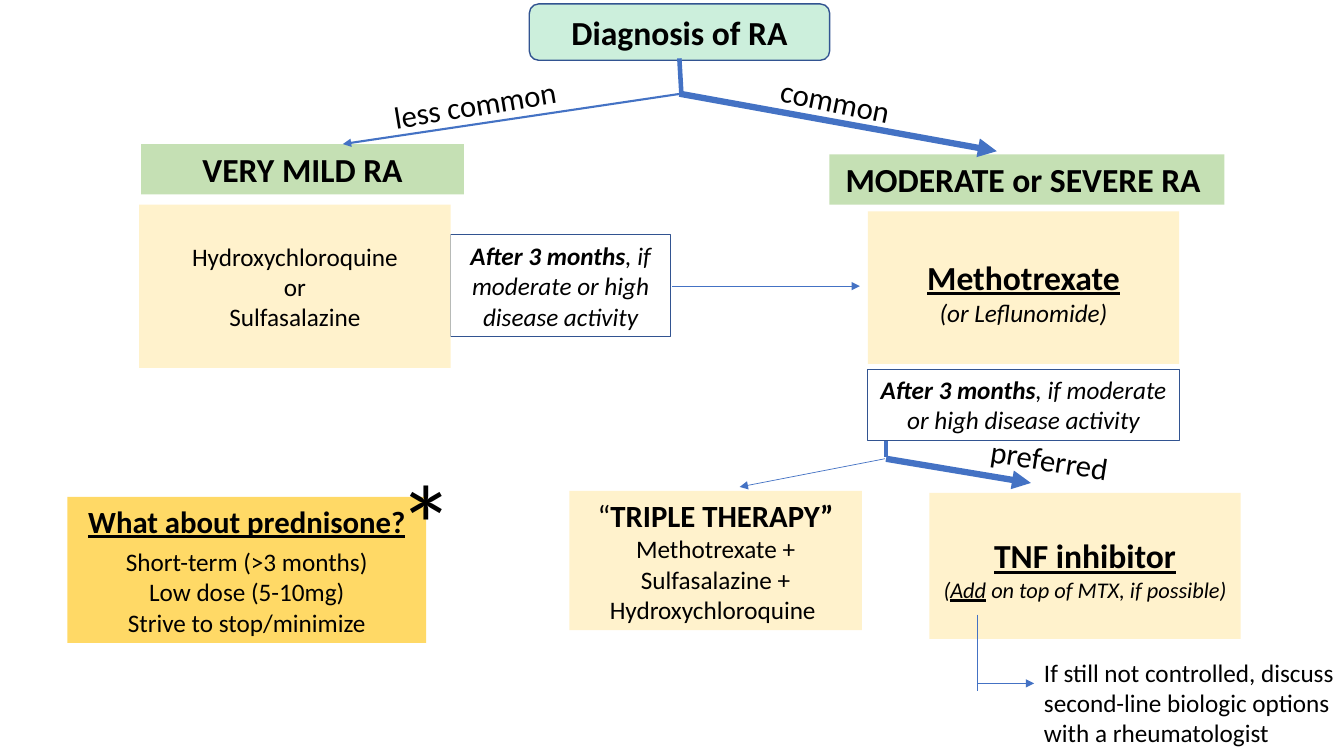
import dataclasses
import typing

import pptx
import pptx.dml.color
import pptx.enum.shapes
import pptx.enum.text
import pptx.oxml
import pptx.oxml.ns
import pptx.slide
import pptx.text.text
import pptx.util

Cm = pptx.util.Cm
Pt = pptx.util.Pt
Rgb = pptx.dml.color.RGBColor.from_string
Align = pptx.enum.text.PP_ALIGN
Anchor = pptx.enum.text.MSO_ANCHOR
Preset = pptx.enum.shapes.MSO_SHAPE


@dataclasses.dataclass(frozen=True)
class Theme:
    font: str = "Calibri"
    ink: str = "000000"
    start: str = "CCEFDC"
    severity: str = "C5E0B4"
    treatment: str = "FFF2CC"
    steroid: str = "FFD966"
    border: str = "325491"
    arrow: str = "4472C4"
    heading: float = 24
    label: float = 22
    body: float = 18
    remark: float = 16
    asterisk: float = 80
    thin: float = 0.5
    medium: float = 1.5
    stem: float = 3.25
    thick: float = 4.5


THEME = Theme()


class Run(typing.NamedTuple):
    text: str
    size: float = THEME.body
    style: dict[str, bool] = {}


class Line(typing.NamedTuple):
    runs: list[Run]
    space_before: float = 0


class Box(typing.NamedTuple):
    """A filled or outlined box; top_inset anchors its text to the top edge."""
    at: tuple[float, float, float, float]
    lines: list[Line]
    fill: str | None = None
    border: float = 0
    preset: Preset = Preset.RECTANGLE
    top_inset: float | None = None


class Label(typing.NamedTuple):
    at: tuple[float, float, float, float]
    run: Run
    rotation: float = 0
    wrap: bool = True


class Link(typing.NamedTuple):
    start: tuple[float, float]
    end: tuple[float, float]
    width: float
    arrow: bool = True


BOLD = {"bold": True}
ITALIC = {"italic": True}
BOLD_ITALIC = BOLD | ITALIC
TITLE = {"bold": True, "underline": True}

ESCALATION = [Line([Run("After 3 months", style=BOLD_ITALIC),
                    Run(", if moderate or high disease activity", style=ITALIC)])]

BOXES = [
    Box((13.34, 0.1, 7.57, 1.42), [Line([Run("Diagnosis of RA", THEME.heading, BOLD)])],
        THEME.start, 1, Preset.ROUNDED_RECTANGLE),
    Box((1.7, 12.52, 9.04, 3.68), [
        Line([Run("What about prednisone?", THEME.label, TITLE)]),
        Line([Run("Short-term (>3 months)")], space_before=5),
        Line([Run("Low dose (5-10mg)")]),
        Line([Run("Strive to stop/minimize")]),
    ], THEME.steroid),
    Box((20.9, 3.89, 9.96, 1.27),
        [Line([Run("MODERATE or SEVERE RA ", THEME.heading, BOLD)])], THEME.severity),
    Box((3.56, 3.63, 8.13, 1.27),
        [Line([Run("VERY MILD RA", THEME.heading, BOLD)])], THEME.severity),
    Box((11.35, 5.92, 5.56, 2.57), ESCALATION, border=0.75),
    Box((3.51, 5.16, 7.85, 4.11),
        [Line([Run(name)]) for name in ("Hydroxychloroquine", "or", "Sulfasalazine")],
        THEME.treatment),
    Box((21.87, 5.33, 7.85, 3.84), [
        Line([Run("Methotrexate", THEME.heading, TITLE)]),
        Line([Run("(or Leflunomide)", style=ITALIC)]),
    ], THEME.treatment, top_inset=1.14),
    Box((21.87, 9.3, 7.85, 1.8), ESCALATION, border=0.75),
    Box((23.42, 12.42, 7.85, 3.68), [
        Line([Run("TNF inhibitor", THEME.heading, TITLE)]),
        Line([Run("(", THEME.remark, ITALIC),
              Run("Add", THEME.remark, ITALIC | {"underline": True}),
              Run(" on top of MTX, if possible)", THEME.remark, ITALIC)]),
    ], THEME.treatment, top_inset=1.07),
    Box((14.35, 12.37, 7.37, 3.51), [
        Line([Run("“", THEME.label), Run("TRIPLE THERAPY”", THEME.label, BOLD)]),
        Line([Run("Methotrexate + Sulfasalazine + Hydroxychloroquine ")]),
    ], THEME.treatment),
]

LABELS = [
    Label((19.38, 2.26, 6.38, 1.19), Run("common", THEME.label), 11.7),
    Label((9.65, 1.96, 5.51, 1.19), Run("less common", THEME.label), -9.3),
    Label((24.71, 11.02, 3.89, 1.19), Run("preferred", THEME.label), 9),
    Label((26.06, 16.43, 7.75, 2.57), Run(
        "If still not controlled, discuss second-line biologic options with a rheumatologist")),
    Label((9.8, 11.3, 1.93, 3.68), Run("*", THEME.asterisk), wrap=False),
]

LINKS = [
    Link((17.17, 2.36), (8.64, 3.63), THEME.medium),
    Link((17.12, 2.36), (25.12, 3.81), THEME.thick),
    Link((17.17, 2.34), (17.12, 1.47), THEME.stem, arrow=False),
    Link((16.94, 7.21), (21.67, 7.21), THEME.thin),
    Link((22.33, 11.56), (25.98, 12.17), THEME.thick),
    Link((22.3, 11.56), (18.64, 12.27), THEME.thin),
    Link((22.33, 11.51), (22.33, 11.1), THEME.stem, arrow=False),
    Link((24.64, 15.49), (24.64, 17.42), THEME.thin, arrow=False),
    Link((24.64, 17.22), (26.06, 17.22), THEME.thin),
]


def write_lines(frame: pptx.text.text.TextFrame, lines: list[Line], align: Align) -> None:
    for index, line in enumerate(lines):
        paragraph = frame.add_paragraph() if index else frame.paragraphs[0]
        paragraph.alignment = align
        if line.space_before:
            paragraph.space_before = Pt(line.space_before)
        for run in line.runs:
            piece = paragraph.add_run()
            piece.text = run.text
            piece.font.color.rgb = Rgb(THEME.ink)
            formats = {"name": THEME.font, "size": Pt(run.size)} | run.style
            for attribute, value in formats.items():
                setattr(piece.font, attribute, value)


def draw_box(slide: pptx.slide.Slide, box: Box) -> None:
    panel = slide.shapes.add_shape(box.preset, *map(Cm, box.at))
    panel.shadow.inherit = False
    if box.fill:
        panel.fill.solid()
        panel.fill.fore_color.rgb = Rgb(box.fill)
    else:
        panel.fill.background()
    if box.border:
        panel.line.color.rgb = Rgb(THEME.border)
        panel.line.width = Pt(box.border)
    else:
        panel.line.fill.background()
    frame = panel.text_frame
    frame.word_wrap = True
    frame.vertical_anchor = Anchor.MIDDLE
    if box.top_inset is not None:
        frame.vertical_anchor = Anchor.TOP
        frame.margin_top = Cm(box.top_inset)
    write_lines(frame, box.lines, Align.CENTER)


def draw_label(slide: pptx.slide.Slide, label: Label) -> None:
    caption = slide.shapes.add_textbox(*map(Cm, label.at))
    caption.rotation = label.rotation
    caption.text_frame.word_wrap = label.wrap
    caption.text_frame.margin_right = 0
    write_lines(caption.text_frame, [Line([label.run])], Align.LEFT)


def draw_link(slide: pptx.slide.Slide, link: Link) -> None:
    connector = slide.shapes.add_connector(
        pptx.enum.shapes.MSO_CONNECTOR.STRAIGHT, *map(Cm, link.start + link.end))
    connector.line.color.rgb = Rgb(THEME.arrow)
    connector.line.width = Pt(link.width)
    if link.arrow:
        head = pptx.oxml.parse_xml(
            f'<a:tailEnd {pptx.oxml.ns.nsdecls("a")} type="triangle"/>')
        connector.line._get_or_add_ln().append(head)
    connector._element.spPr.append(
        pptx.oxml.parse_xml(f'<a:effectLst {pptx.oxml.ns.nsdecls("a")}/>'))


def main() -> None:
    deck = pptx.Presentation()
    deck.slide_width, deck.slide_height = Cm(33.87), Cm(19.05)
    slide = deck.slides.add_slide(deck.slide_layouts[6])
    for box in BOXES:
        draw_box(slide, box)
    for label in LABELS:
        draw_label(slide, label)
    for link in LINKS:
        draw_link(slide, link)
    deck.save("out.pptx")


if __name__ == "__main__":
    main()
